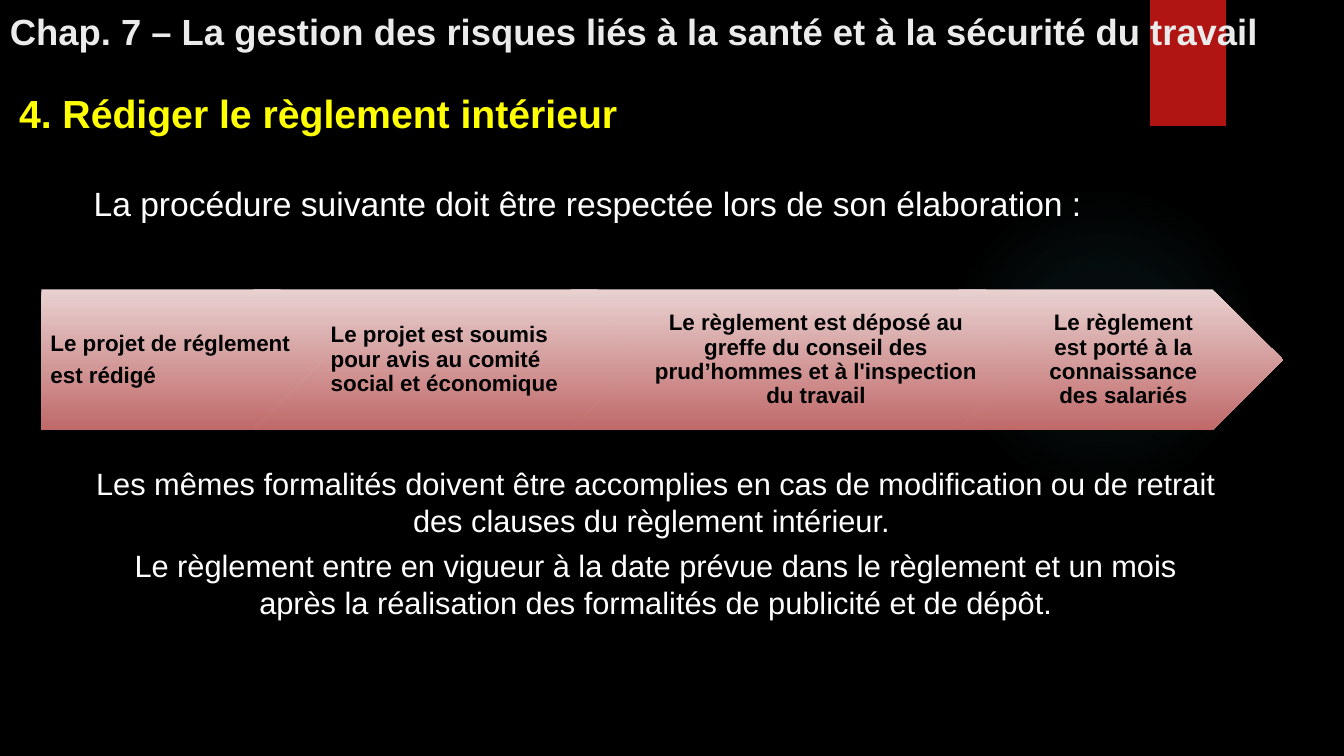
from dataclasses import dataclass

from lxml.etree import SubElement
from pptx import Presentation
from pptx.dml.color import RGBColor
from pptx.enum.shapes import MSO_SHAPE
from pptx.enum.text import MSO_ANCHOR, PP_ALIGN
from pptx.oxml.ns import qn
from pptx.util import Inches, Pt


@dataclass(frozen=True)
class Theme:
    font: str = "Arial"
    background: str = "000000"
    glow: str = "50B9C1"
    ribbon: str = "B01513"
    title: str = "EBEBEB"
    heading: str = "FFFF00"
    body: str = "FFFFFF"
    step_text: str = "000000"
    step_top: str = "E8D1D0"
    step_bottom: str = "C06969"
    title_size: int = 26
    heading_size: int = 28
    intro_size: int = 24
    closing_size: int = 22
    step_size: int = 16


@dataclass(frozen=True)
class Box:
    """Place and size in percent of the slide's width and height."""
    left: float
    top: float
    width: float
    height: float


@dataclass(frozen=True)
class Style:
    size: int
    color: str
    bold: bool = False
    align: PP_ALIGN = PP_ALIGN.LEFT
    anchor: MSO_ANCHOR = MSO_ANCHOR.TOP
    space_after: float = 0
    line_spacing: float = 1


@dataclass(frozen=True)
class TextBlock:
    box: Box
    text: str
    style: Style


@dataclass(frozen=True)
class Step:
    width: float
    text: str
    align: PP_ALIGN


T = Theme()
STEPS_LEFT, STEPS_TOP, STEPS_HEIGHT, STEP_OVERLAP = 3.08, 38.27, 18.67, 7.28

BLOCKS = [
    TextBlock(Box(0.68, 11.2, 58.13, 7.6), "4. Rédiger le règlement intérieur",
              Style(T.heading_size, T.heading, bold=True)),
    TextBlock(Box(6.23, 23.47, 83.1, 6.67),
              "La procédure suivante doit être respectée lors de son élaboration :",
              Style(T.intro_size, T.body, align=PP_ALIGN.JUSTIFY)),
    TextBlock(Box(6.23, 60.8, 85.13, 22.27),
              "Les mêmes formalités doivent être accomplies en cas de modification ou de "
              "retrait des clauses du règlement intérieur. \n"
              "Le règlement entre en vigueur à la date prévue dans le règlement et un mois "
              "après la réalisation des formalités de publicité et de dépôt.",
              Style(T.closing_size, T.body, align=PP_ALIGN.CENTER, space_after=6)),
    TextBlock(Box(0, 0, 100, 7.6),
              "Chap. 7 – La gestion des risques liés à la santé et à la sécurité du travail",
              Style(T.title_size, T.title, bold=True, anchor=MSO_ANCHOR.BOTTOM)),
]

STEPS = [
    Step(23.03, "Le projet de réglement\nest rédigé", PP_ALIGN.LEFT),
    Step(30.9, "Le projet est soumis pour avis au comité social et économique ",
         PP_ALIGN.LEFT),
    Step(36.15, "Le règlement est déposé au greffe du conseil des prud’hommes "
                "et à l'inspection du travail", PP_ALIGN.CENTER),
    Step(24.15, "Le règlement est porté à la connaissance des salariés", PP_ALIGN.CENTER),
]

prs = Presentation()
prs.slide_width, prs.slide_height = Inches(13.333), Inches(7.5)
slide = prs.slides.add_slide(prs.slide_layouts[6])


def place(box: Box) -> tuple[int, int, int, int]:
    """Turn percentages into slide lengths."""
    w, h = prs.slide_width / 100, prs.slide_height / 100
    return (round(box.left * w), round(box.top * h),
            round(box.width * w), round(box.height * h))


def set_text(s, text: str, style: Style) -> None:
    tf = s.text_frame
    tf.word_wrap = True
    tf.vertical_anchor = style.anchor
    tf.text = text
    for p in tf.paragraphs:
        p.alignment = style.align
        p.line_spacing = style.line_spacing
        p.space_after = Pt(style.space_after)
        for r in p.runs:
            r.font.name = T.font
            r.font.size = Pt(style.size)
            r.font.bold = style.bold
            r.font.color.rgb = RGBColor.from_string(style.color)


def add_plain_shape(kind: MSO_SHAPE, box: Box):
    s = slide.shapes.add_shape(kind, *place(box))
    s.shadow.inherit = False
    s.line.fill.background()
    return s


def add_color(parent, color: str, alpha: int) -> None:
    """Add a colour with its opacity in percent."""
    clr = SubElement(parent, qn("a:srgbClr"), val=color)
    SubElement(clr, qn("a:alpha"), val=str(alpha * 1000))


def add_glow() -> None:
    """Draw the faint disc that fades out towards its edge."""
    s = add_plain_shape(MSO_SHAPE.OVAL, Box(70.58, 24.4, 23.1, 41.07))
    s.fill.gradient()
    grad = s._element.spPr.find(qn("a:gradFill"))
    for child in list(grad):
        grad.remove(child)
    stops = SubElement(grad, qn("a:gsLst"))
    for pos, alpha in ((0, 7), (36, 6), (69, 0)):
        add_color(SubElement(stops, qn("a:gs"), pos=str(pos * 1000)), T.glow, alpha)
    radial = SubElement(grad, qn("a:path"), path="circle")
    SubElement(radial, qn("a:fillToRect"), l="50000", t="50000", r="50000", b="50000")


def add_ribbon() -> None:
    s = add_plain_shape(MSO_SHAPE.RECTANGLE, Box(85.58, 0, 5.63, 16.67))
    s.fill.solid()
    s.fill.fore_color.rgb = RGBColor.from_string(T.ribbon)
    effects = s._element.spPr.find(qn("a:effectLst"))
    shadow = SubElement(effects, qn("a:outerShdw"), blurRad=str(Pt(3)), dist=str(Pt(2)),
                        dir="5400000", algn="ctr", rotWithShape="0")
    add_color(shadow, T.background, 45)


def add_step(step: Step, left: float, first: bool) -> None:
    kind = MSO_SHAPE.PENTAGON if first else MSO_SHAPE.CHEVRON
    s = add_plain_shape(kind, Box(left, STEPS_TOP, step.width, STEPS_HEIGHT))
    s.fill.gradient()
    s.fill.gradient_angle = 270
    for stop, color, pos in zip(s.fill.gradient_stops, (T.step_top, T.step_bottom), (0, 1)):
        stop.color.rgb = RGBColor.from_string(color)
        stop.position = pos
    tf = s.text_frame
    tf.margin_left = Inches(0.09 if first else 0.07)
    tf.margin_right = Inches(0.02)
    set_text(s, step.text, Style(T.step_size, T.step_text, True, step.align,
                                 MSO_ANCHOR.MIDDLE, 0.35 * T.step_size, 0.9))


def main() -> None:
    fill = slide.background.fill
    fill.solid()
    fill.fore_color.rgb = RGBColor.from_string(T.background)
    add_glow()
    add_ribbon()
    left = STEPS_LEFT
    for i, step in enumerate(STEPS):
        add_step(step, left, first=i == 0)
        left += step.width - STEP_OVERLAP
    for block in BLOCKS:
        set_text(slide.shapes.add_textbox(*place(block.box)), block.text, block.style)
    prs.save("out.pptx")


if __name__ == "__main__":
    main()
